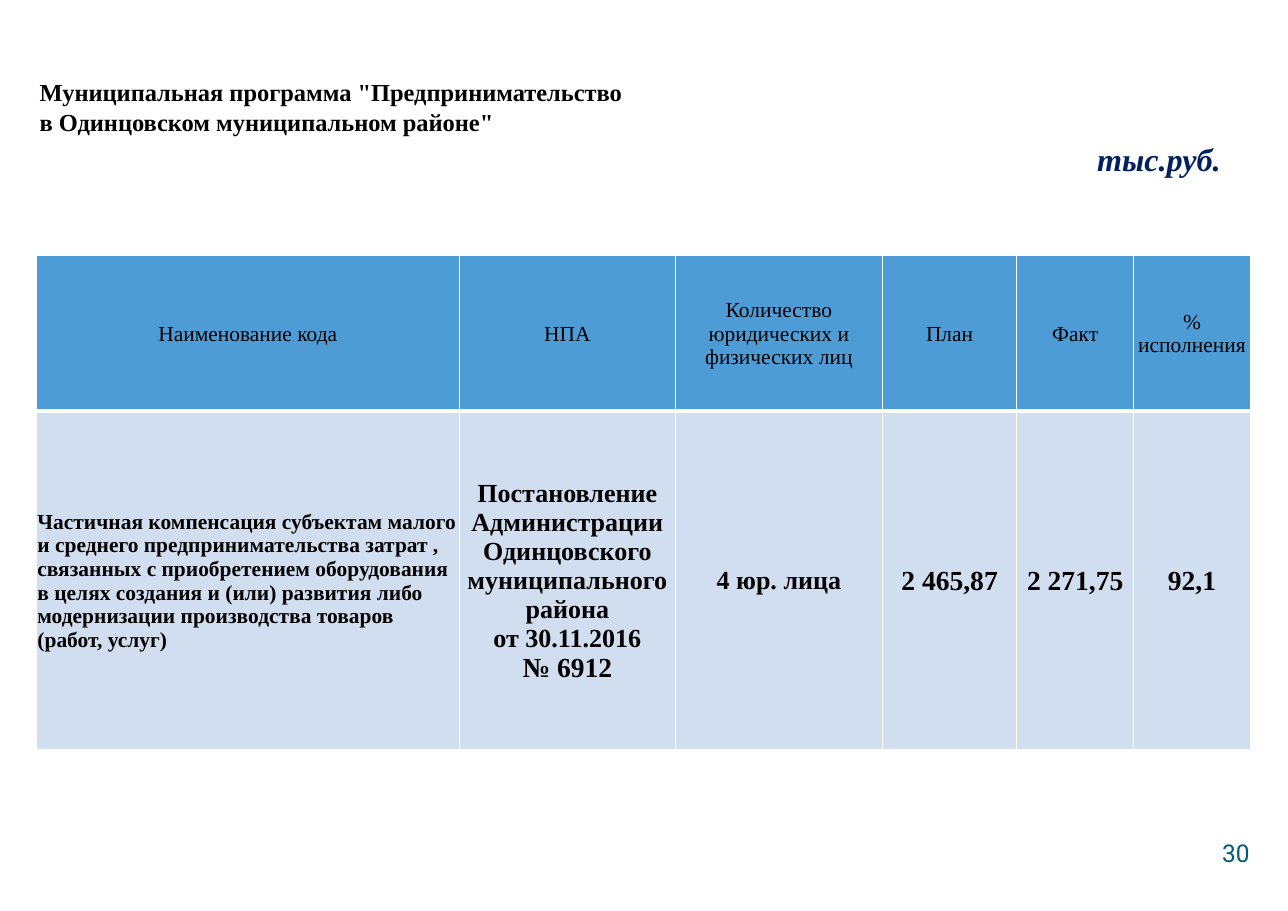
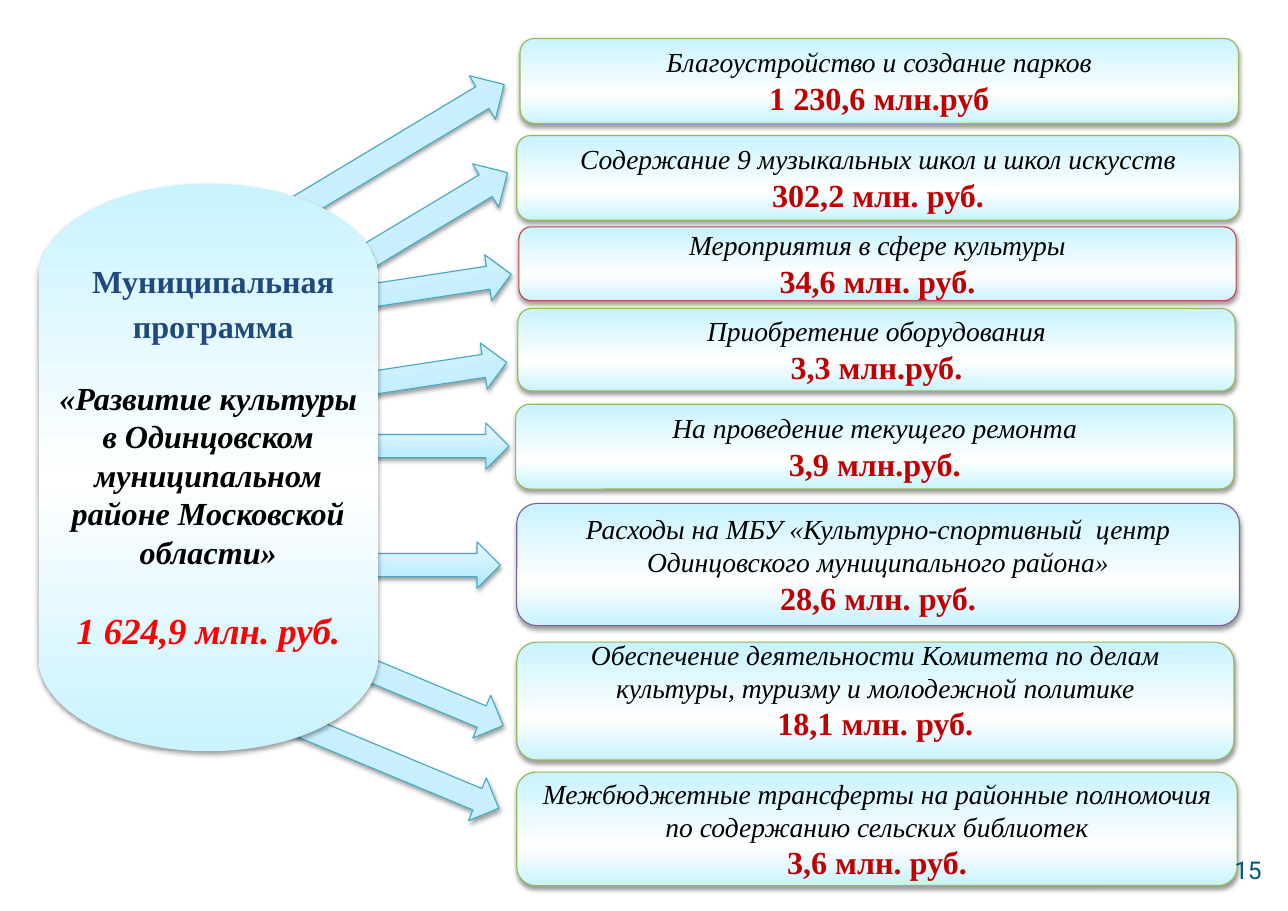
from dataclasses import dataclass

from lxml import etree
from pptx import Presentation
from pptx.dml.color import RGBColor
from pptx.enum.shapes import MSO_SHAPE
from pptx.enum.text import MSO_ANCHOR, MSO_AUTO_SIZE, PP_ALIGN
from pptx.oxml import parse_xml
from pptx.oxml.ns import nsdecls, qn
from pptx.util import Inches, Pt

LEFT, CENTER, RIGHT = PP_ALIGN.LEFT, PP_ALIGN.CENTER, PP_ALIGN.RIGHT
MIDDLE, TOP = MSO_ANCHOR.MIDDLE, MSO_ANCHOR.TOP
NO_AUTOFIT = MSO_AUTO_SIZE.NONE
ROUND_BOX = MSO_SHAPE.ROUNDED_RECTANGLE
ARROW = MSO_SHAPE.RIGHT_ARROW
DISK = MSO_SHAPE.FLOWCHART_MAGNETIC_DISK
TITLE_LAYOUT, BLANK_LAYOUT = 5, 6

WHITE, HEADER_BLUE, ROW_BLUE = "FFFFFF", "4E9CD6", "D0DEF0"
TEAL, GREEN, RED, PURPLE = "46AAC5", "98B955", "BF4C48", "7D60A0"
ARROW_GRADIENT = [(0, "A7E6FF"), (35, "C1EDFF"), (100, "E7F8FF")]
BOX_GRADIENT = [(0, "C8F3FF"), (35, WHITE), (100, "C8F3FF")]
DISK_GRADIENT = [(0, "C8F3FF"), (48, WHITE), (100, "C8F3FF")]


def rgb(color):
    return RGBColor.from_string(color)


@dataclass(frozen=True)
class TextStyle:
    size: float
    color: str = "000000"
    bold: bool = False
    italic: bool = False
    font: str = "Times New Roman"
    before: float = 0
    spacing: float = 1.0


TITLE = TextStyle(16, bold=True)
PAGE_NUMBER = TextStyle(16, "005B76", font="Roboto")
UNIT = TextStyle(21, "002060", bold=True, italic=True)
HEADER = TextStyle(14)
CODE_NAME = TextStyle(14, bold=True)
DECREE = TextStyle(17, bold=True)
FIGURE = TextStyle(18, bold=True)
ITEM = TextStyle(18, italic=True)
AMOUNT = TextStyle(21, "C00000", bold=True)
PROGRAM_LABEL = TextStyle(21, "1F497D", bold=True, spacing=1.15)
PROGRAM_NAME = TextStyle(21, bold=True, italic=True)
PROGRAM_TOTAL = TextStyle(24, "FF0000", bold=True, italic=True, before=24)


class Deck:
    """Holds the presentation, its shared style and the current slide."""

    def __init__(self):
        self.presentation = Presentation()
        self.presentation.slide_width = Inches(11.69)
        self.presentation.slide_height = Inches(8.27)
        self.slide = None

    def new_slide(self, layout):
        layouts = self.presentation.slide_layouts
        self.slide = self.presentation.slides.add_slide(layouts[layout])

    def set_lines(self, frame, lines, align=CENTER):
        """Fill a text frame with (text, style) paragraphs."""
        frame.text = "\n".join(text for text, _ in lines)
        for paragraph, (_, style) in zip(frame.paragraphs, lines):
            paragraph.alignment = align
            paragraph.space_before = Pt(style.before)
            paragraph.line_spacing = style.spacing
            for run in paragraph.runs:
                run.font.name = style.font
                run.font.size = Pt(style.size)
                run.font.bold = style.bold
                run.font.italic = style.italic
                run.font.color.rgb = rgb(style.color)

    def title(self, text, box):
        title = self.slide.shapes.title
        title.left, title.top, title.width, title.height = map(Inches, box)
        frame = title.text_frame
        frame.auto_size = NO_AUTOFIT
        frame.vertical_anchor = MIDDLE
        self.set_lines(frame, [(text, TITLE)], LEFT)

    def text(self, lines, box, align=CENTER, anchor=MIDDLE, wrap=True):
        frame = self.slide.shapes.add_textbox(*map(Inches, box)).text_frame
        frame.word_wrap = wrap
        frame.vertical_anchor = anchor
        self.set_lines(frame, lines, align)

    def page_number(self, number, left, top):
        self.text([(number, PAGE_NUMBER)], (left, top, 0.71, 0.44), RIGHT)

    def gradient(self, shape, stops):
        shape.fill.gradient()
        shape.fill.gradient_angle = 90
        gradient_fill = shape._element.spPr.find(qn("a:gradFill"))
        stop_list = gradient_fill.find(qn("a:gsLst"))
        for old_stop in list(stop_list):
            stop_list.remove(old_stop)
        for position, color in stops:
            stop = etree.SubElement(stop_list, qn("a:gs"), pos=str(position * 1000))
            etree.SubElement(stop, qn("a:srgbClr"), val=color)

    def soft_shadow(self, shape):
        shape.shadow.inherit = False
        effects = shape._element.spPr.find(qn("a:effectLst"))
        effects.append(parse_xml(
            f'<a:outerShdw {nsdecls("a")} blurRad="{Pt(3.1)}" dist="{Pt(1.6)}" '
            'dir="5400000" rotWithShape="0"><a:srgbClr val="000000">'
            '<a:alpha val="38000"/></a:srgbClr></a:outerShdw>'))

    def shape(self, kind, box, stops, outline=None, lines=(), rotation=0,
              bottom_inset=0.05):
        shape = self.slide.shapes.add_shape(kind, *map(Inches, box))
        shape.rotation = rotation
        self.gradient(shape, stops)
        if outline:
            shape.line.color.rgb = rgb(outline)
            shape.line.width = Pt(0.75)
        else:
            shape.line.fill.background()
        self.soft_shadow(shape)
        if lines:
            frame = shape.text_frame
            frame.word_wrap = True
            frame.vertical_anchor = MIDDLE
            frame.margin_bottom = Inches(bottom_inset)
            self.set_lines(frame, lines)

    def cell(self, cell, lines, fill, align, bottom_border):
        cell.vertical_anchor = MIDDLE
        cell.margin_left = cell.margin_right = cell.margin_top = Inches(0.01)
        cell.margin_bottom = 0
        properties = cell._tc.get_or_add_tcPr()
        for side, width in (("L", 1), ("R", 1), ("T", 1), ("B", bottom_border)):
            properties.append(parse_xml(
                f'<a:ln{side} {nsdecls("a")} w="{Pt(width)}"><a:solidFill>'
                f'<a:srgbClr val="{WHITE}"/></a:solidFill></a:ln{side}>'))
        cell.fill.solid()
        cell.fill.fore_color.rgb = rgb(fill)
        self.set_lines(cell.text_frame, lines, align)

    def table(self, left, top, widths, heights, headers, values):
        """Draw a header row and one row of (lines, alignment) values."""
        table = self.slide.shapes.add_table(
            2, len(widths), Inches(left), Inches(top),
            Inches(sum(widths)), Inches(sum(heights))).table
        for row, height in zip(table.rows, heights):
            row.height = Inches(height)
        for index, width in enumerate(widths):
            table.columns[index].width = Inches(width)
            self.cell(table.cell(0, index), [(headers[index], HEADER)],
                      HEADER_BLUE, CENTER, 3)
            lines, align = values[index]
            self.cell(table.cell(1, index), lines, ROW_BLUE, align, 1)


def build_business_program(deck):
    deck.new_slide(TITLE_LAYOUT)
    deck.title('Муниципальная программа "Предпринимательство \v'
               'в Одинцовском муниципальном районе"', (0.26, 0.28, 10.53, 1.38))
    headers = ["Наименование кода", "НПА", "Количество юридических и физических лиц",
               "План", "Факт", "% исполнения"]
    values = [
        ([("Частичная компенсация субъектам малого и среднего предпринимательства "
           "затрат , связанных с приобретением оборудования в целях создания и (или) "
           "развития либо модернизации производства товаров (работ, услуг)",
           CODE_NAME)], LEFT),
        ([("Постановление Администрации Одинцовского муниципального\vрайона", DECREE),
          ("от 30.11.2016", DECREE),
          ("№ 6912", FIGURE)], CENTER),
        ([("4 юр. лица", DECREE)], CENTER),
        ([("2 465,87", FIGURE)], CENTER),
        ([("2 271,75", FIGURE)], CENTER),
        ([("92,1", FIGURE)], CENTER),
    ]
    deck.table(0.33, 2.32, [3.84, 1.96, 1.88, 1.22, 1.06, 1.06], [1.41, 3.08],
               headers, values)
    deck.page_number("30", 10.73, 7.52)
    deck.text([("тыс.руб.", UNIT)], (9.86, 1.22, 1.34, 0.45), LEFT, TOP, wrap=False)


def build_culture_program(deck):
    deck.new_slide(BLANK_LAYOUT)
    arrows = [
        (1.14, 1.49, 3.7, 0.46, 329),
        (0.69, 6.36, 3.99, 0.42, 22.6),
        (0.91, 3.36, 3.71, 0.42, 351.3),
        (0.91, 3.84, 3.71, 0.42, 0),
        (0.95, 2.56, 3.71, 0.42, 351.3),
        (0.73, 5.61, 3.99, 0.42, 22.6),
        (0.79, 4.92, 3.75, 0.42, 0),
        (1.17, 2.29, 3.7, 0.46, 329),
    ]
    for *box, rotation in arrows:
        deck.shape(ARROW, box, ARROW_GRADIENT, TEAL, rotation=rotation)

    deck.shape(DISK, (0.35, 1.67, 3.08, 5.15), DISK_GRADIENT, lines=[
        ("«Развитие культуры", PROGRAM_NAME),
        ("в Одинцовском муниципальном районе Московской области»", PROGRAM_NAME),
        ("1 624,9 млн. руб.", PROGRAM_TOTAL)])
    deck.text([("Муниципальная программа", PROGRAM_LABEL)], (0.6, 2.3, 2.67, 0.85))

    expenses = [
        (4.72, 0.35, 6.52, 0.77, GREEN, 0.05,
         "Благоустройство и создание парков", "1 230,6 млн.руб"),
        (4.69, 1.23, 6.56, 0.77, GREEN, 0.05,
         "Содержание 9 музыкальных школ и школ искусств", "302,2 млн. руб."),
        (4.71, 2.06, 6.51, 0.67, RED, 0.05,
         "Мероприятия в сфере культуры", "34,6 млн. руб."),
        (4.7, 2.8, 6.51, 0.75, GREEN, 0.05,
         "Приобретение оборудования", "3,3 млн.руб."),
        (4.68, 3.67, 6.52, 0.77, GREEN, 0.05,
         "На проведение текущего ремонта", "3,9 млн.руб."),
        (4.69, 4.57, 6.56, 1.11, PURPLE, 0.05,
         "Расходы на МБУ «Культурно-спортивный  центр Одинцовского "
         "муниципального района»", "28,6 млн. руб."),
        (4.69, 5.83, 6.51, 1.07, GREEN, 0.25,
         "Обеспечение деятельности Комитета по делам культуры, туризму "
         "и молодежной политике", "18,1 млн. руб."),
        (4.69, 7.01, 6.54, 1.03, GREEN, 0.05,
         "Межбюджетные трансферты на районные полномочия по содержанию "
         "сельских библиотек", "3,6 млн. руб."),
    ]
    for *box, outline, bottom_inset, item, amount in expenses:
        deck.shape(ROUND_BOX, box, BOX_GRADIENT, outline,
                   [(item, ITEM), (amount, AMOUNT)], bottom_inset=bottom_inset)
    deck.page_number("15", 10.84, 7.68)


def main():
    deck = Deck()
    build_business_program(deck)
    build_culture_program(deck)
    deck.presentation.save("out.pptx")


if __name__ == "__main__":
    main()
